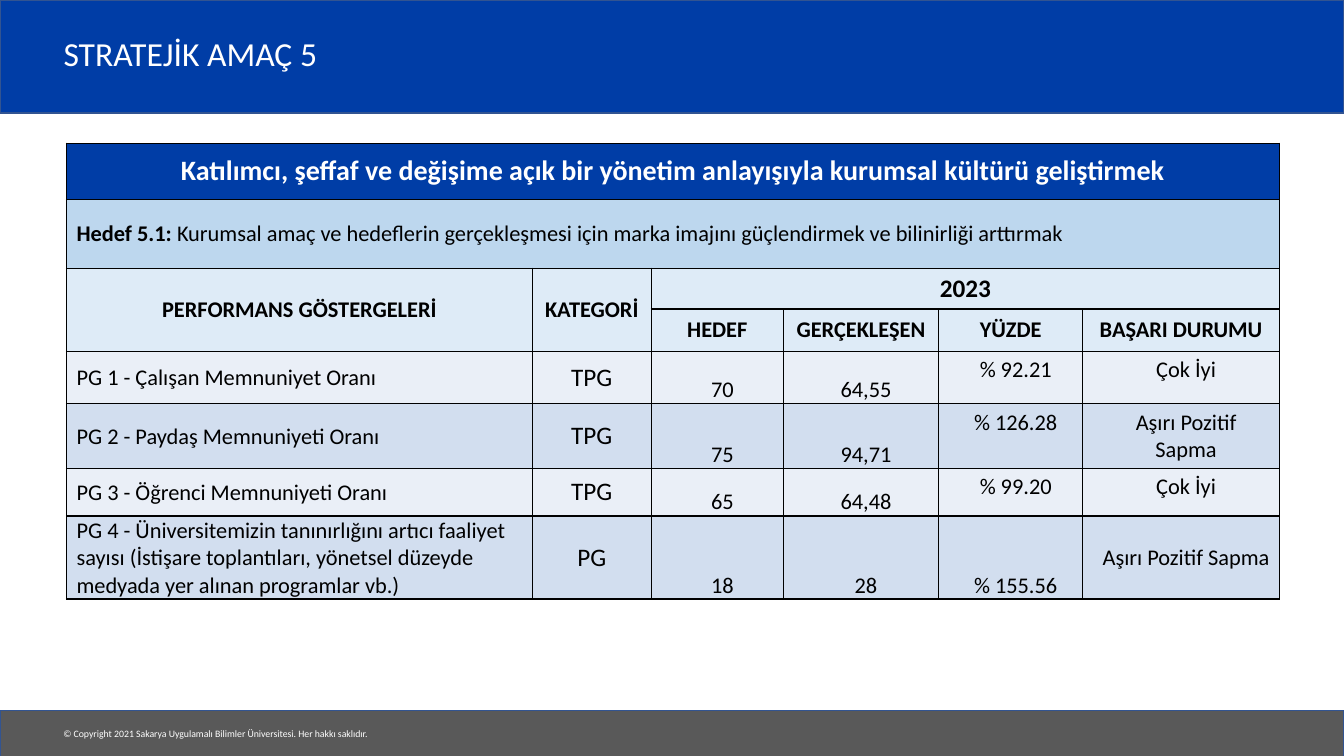
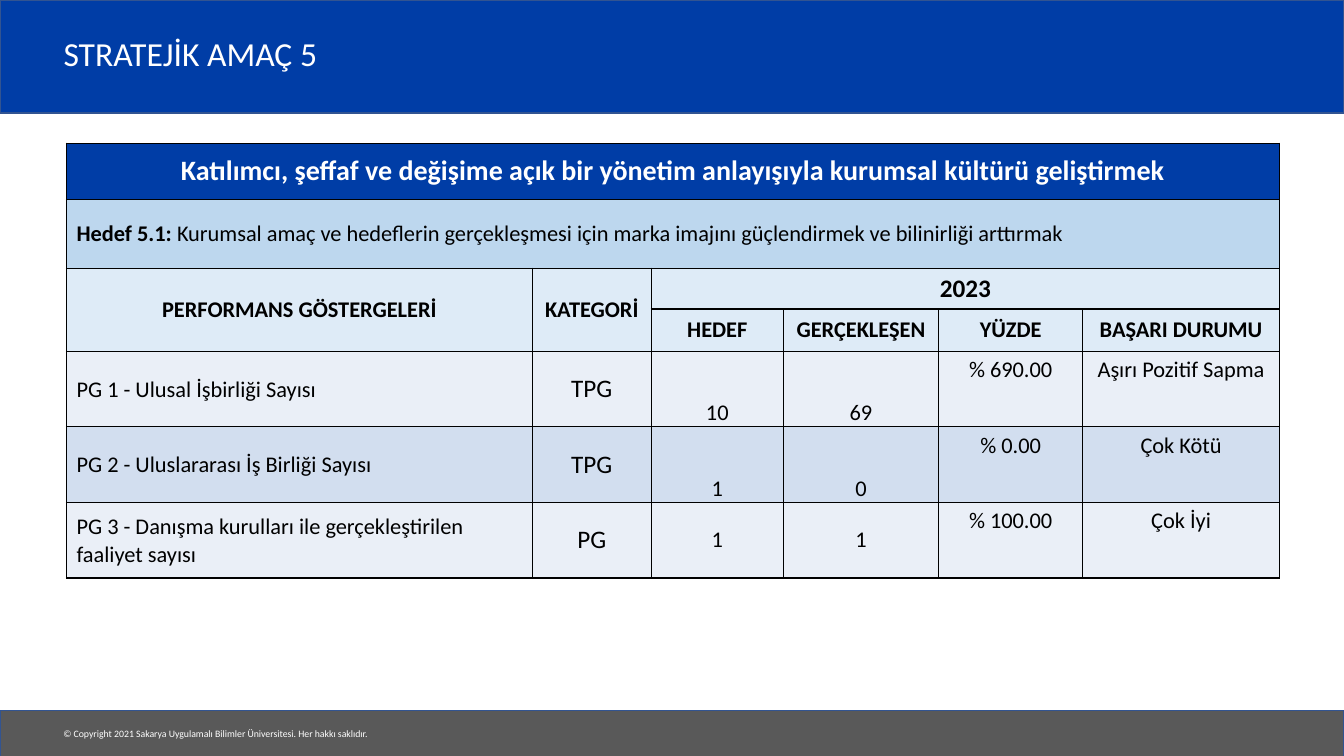
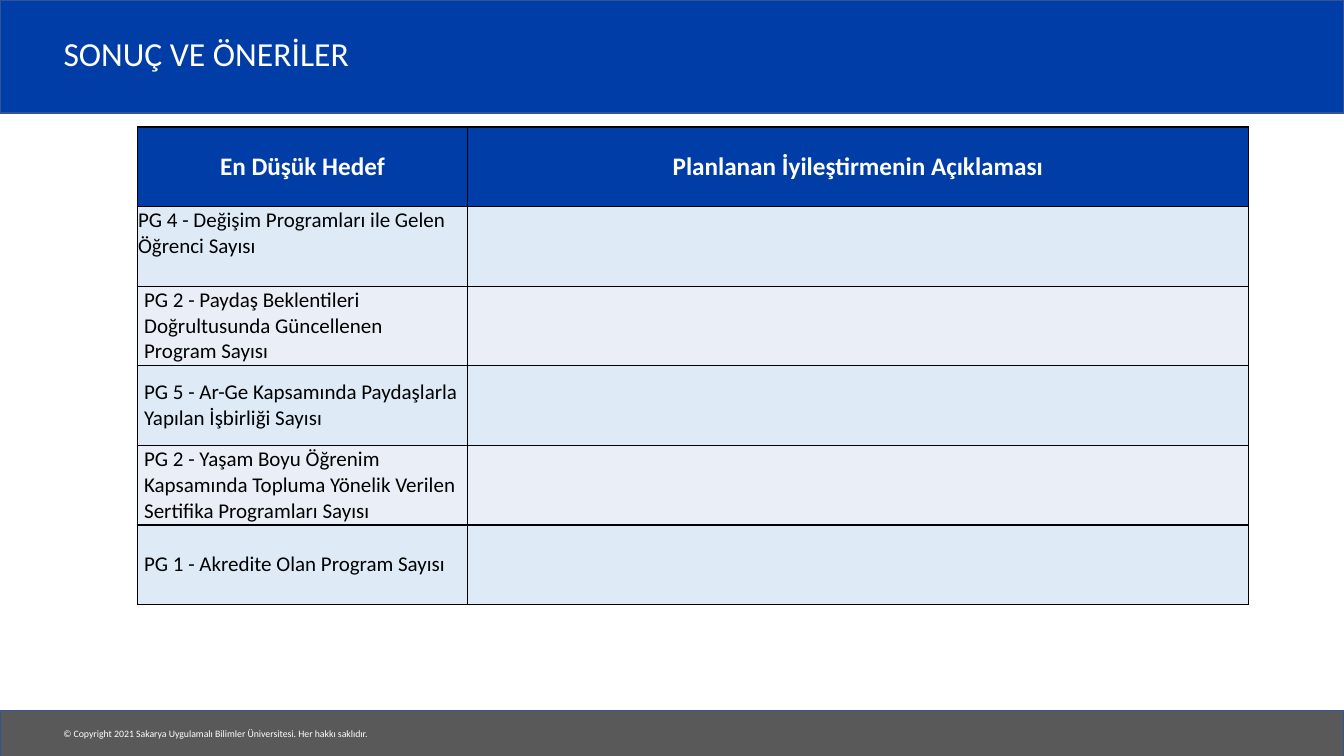
from lxml import etree
from pptx import Presentation
from pptx.dml.color import RGBColor
from pptx.enum import shapes, text
from pptx.oxml.ns import qn
from pptx.util import Inches, Pt

C = {
    "blue": "003DA6", "gray": "595959", "band_line": "325491",
    "white": "FFFFFF", "black": "000000",
    "goal": "BDD7EE", "head": "DEEBF7", "light": "EAEFF7", "mid": "D2DEEF",
}
FONT = "Calibri"
LEFT, CENTER = text.PP_ALIGN.LEFT, text.PP_ALIGN.CENTER
TOP, MIDDLE, BOTTOM = (text.MSO_ANCHOR.TOP, text.MSO_ANCHOR.MIDDLE,
                       text.MSO_ANCHOR.BOTTOM)
TIGHT = (0.01, 0.01, 0.01, 0)
NORMAL = (0.1, 0.05, 0.1, 0.05)
SIDE = (0.07, 0, 0.07, 0)

COPYRIGHT = ("© Copyright 2021 Sakarya Uygulamalı Bilimler Üniversitesi. "
             "Her hakkı saklıdır.")
AIM = ("Katılımcı, şeffaf ve değişime açık bir yönetim anlayışıyla "
       "kurumsal kültürü geliştirmek")
GOAL = ("Kurumsal amaç ve hedeflerin gerçekleşmesi için marka imajını "
        "güçlendirmek ve bilinirliği arttırmak")
GOAL_BOX = (0.66, 1.42, 12.02)
RESULT_BOX = (1.36, 1.26, 11.02)


def rgb(name):
    return RGBColor.from_string(C[name])


def add_text(tf, content, size=16, color="black", bold=False, align=LEFT,
             indent=0.0, spacing=None):
    """Fill the first paragraph; content is a string or (string, bold) runs."""
    p = tf.paragraphs[0]
    p.alignment = align
    if indent:
        p._p.get_or_add_pPr().set("marL", str(Inches(indent)))
    if spacing:
        p.line_spacing = spacing
    runs = [(content, bold)] if isinstance(content, str) else content
    for words, is_bold in runs:
        r = p.add_run()
        r.text = words
        r.font.name, r.font.size, r.font.bold = FONT, Pt(size), is_bold
        r.font.color.rgb = rgb(color)


# Parts shared by all slides
def add_band(sl, top, height, fill):
    sp = sl.shapes.add_shape(shapes.MSO_SHAPE.RECTANGLE, 0, Inches(top),
                             Inches(13.33), Inches(height))
    sp.shadow.inherit = False
    sp.fill.solid()
    sp.fill.fore_color.rgb = rgb(fill)
    sp.line.color.rgb = rgb("band_line")
    sp.line.width = Pt(1)
    return sp


def add_footer(sl):
    sp = sl.shapes.add_textbox(Inches(0.53), Inches(7.17), Inches(3.29),
                               Inches(0.22))
    sp.text_frame.word_wrap = False
    add_text(sp.text_frame, COPYRIGHT, size=7, color="white")
    return sp


def move_to_layout(layout, parts):
    """Replace the layout's footer placeholders with the shared parts."""
    for ph in list(layout.placeholders):
        if ph.placeholder_format.type != shapes.PP_PLACEHOLDER.TITLE:
            ph._element.getparent().remove(ph._element)
    for sp in parts:
        layout.shapes._spTree.append(sp._element)


def add_title(sl, words):
    title = sl.shapes.title
    title.left, title.top = Inches(0.53), Inches(0.19)
    title.width, title.height = Inches(11.03), Inches(0.73)
    tf = title.text_frame
    tf.auto_size = text.MSO_AUTO_SIZE.NONE
    tf.vertical_anchor = MIDDLE
    add_text(tf, words, size=24, color="white", spacing=0.9)


# Tables
def set_borders(cell):
    tc_pr = cell._tc.get_or_add_tcPr()
    for i, side in enumerate(("lnL", "lnR", "lnT", "lnB")):
        ln = etree.Element(qn(f"a:{side}"), w=str(Pt(1)))
        fill = etree.SubElement(ln, qn("a:solidFill"))
        etree.SubElement(fill, qn("a:srgbClr"), val=C["black"])
        tc_pr.insert(i, ln)


def add_grid(sl, box, widths, heights, fills):
    """Add an empty bordered table with one fill per row."""
    left, top, width = box
    frame = sl.shapes.add_table(len(heights), len(widths), Inches(left),
                                Inches(top), Inches(width),
                                Inches(sum(heights)))
    table = frame.table
    table.first_row = table.horz_banding = False
    for col, w in zip(table.columns, widths):
        col.width = Inches(w)
    for row, h, fill in zip(table.rows, heights, fills):
        row.height = Inches(h)
        for cell in row.cells:
            cell.fill.solid()
            cell.fill.fore_color.rgb = rgb(fill)
            set_borders(cell)
    return table


def fill_cell(cell, content, anchor=MIDDLE, insets=NORMAL, **fmt):
    cell.vertical_anchor = anchor
    (cell.margin_left, cell.margin_top, cell.margin_right,
     cell.margin_bottom) = map(Inches, insets)
    add_text(cell.text_frame, content, **fmt)


def add_goal_table(sl, box, rows, heights, indent, changes):
    """Aim, goal, two-level header, then one row per indicator.

    changes maps (row, column) to formats that differ from the column's.
    """
    fills = ["blue", "goal", "head", "head"]
    fills += [("light", "mid")[i % 2] for i in range(len(rows))]
    table = add_grid(sl, box, [4.62, 1.18, 1.31, 1.54, 1.43, 1.95],
                     [0.56, 0.68, 0.34, 0.42] + heights, fills)

    for first, last in (((0, 0), (0, 5)), ((1, 0), (1, 5)), ((2, 0), (3, 0)),
                        ((2, 1), (3, 1)), ((2, 2), (2, 5))):
        table.cell(*first).merge(table.cell(*last))

    # Header rows
    fill_cell(table.cell(0, 0), AIM, size=20, color="white", bold=True,
              align=CENTER)
    fill_cell(table.cell(1, 0), [("Hedef 5.1: ", True), (GOAL, False)])
    heads = [(2, 0, "PERFORMANS GÖSTERGELERİ", 16), (2, 1, "KATEGORİ", 16),
             (2, 2, "2023", 18), (3, 2, "HEDEF", 16),
             (3, 3, "GERÇEKLEŞEN", 16), (3, 4, "YÜZDE", 16),
             (3, 5, "BAŞARI DURUMU", 16)]
    for r, c, words, size in heads:
        fill_cell(table.cell(r, c), words, size=size, bold=True, align=CENTER)

    # Indicator rows
    number = dict(anchor=BOTTOM, insets=TIGHT, align=CENTER, indent=indent)
    result = dict(anchor=TOP, align=CENTER, indent=indent)
    formats = [dict(insets=TIGHT, indent=0.09), dict(size=18, align=CENTER),
               number, number, result, result]
    for r, row in enumerate(rows):
        for c, words in enumerate(row):
            fmt = formats[c] | changes.get((r, c), {})
            fill_cell(table.cell(r + 4, c), words, **fmt)


def add_result_table(sl, box, rows):
    """Lowest targets on the left, room for planned improvements right."""
    fills = ["blue"] + [("head", "light")[i % 2] for i in range(len(rows))]
    table = add_grid(sl, box, [3.28, 7.74], [0.79] * len(fills), fills)
    for c, words in enumerate(("En Düşük Hedef",
                               "Planlanan İyileştirmenin Açıklaması")):
        fill_cell(table.cell(0, c), words, insets=SIDE, size=18,
                  color="white", bold=True, align=CENTER)
    for r, (words, fmt) in enumerate(rows, 1):
        fill_cell(table.cell(r, 0), words,
                  **(dict(insets=SIDE, size=15) | fmt))


SATISFACTION = [
    ("PG 1 - Çalışan Memnuniyet Oranı", "TPG", "70", "64,55", "% 92.21",
     "Çok İyi"),
    ("PG 2 - Paydaş Memnuniyeti Oranı", "TPG", "75", "94,71", "% 126.28",
     "Aşırı Pozitif Sapma"),
    ("PG 3 - Öğrenci Memnuniyeti Oranı", "TPG", "65", "64,48", "% 99.20",
     "Çok İyi"),
    ("PG 4 - Üniversitemizin tanınırlığını artıcı faaliyet sayısı (İstişare "
     "toplantıları, yönetsel düzeyde medyada yer alınan programlar vb.)",
     "PG", "18", "28", "% 155.56", "Aşırı Pozitif Sapma"),
]
COOPERATION = [
    ("PG 1 - Ulusal İşbirliği Sayısı", "TPG", "10", "69", "% 690.00",
     "Aşırı Pozitif Sapma"),
    ("PG 2 - Uluslararası İş Birliği Sayısı", "TPG", "1", "0", "% 0.00",
     "Çok Kötü"),
    ("PG 3 - Danışma kurulları ile gerçekleştirilen faaliyet sayısı", "PG",
     "1", "1", "% 100.00", "Çok İyi"),
]
LOWEST = [
    ("PG 4 - Değişim Programları ile Gelen Öğrenci Sayısı",
     dict(anchor=TOP, insets=TIGHT)),
    ("PG 2 - Paydaş Beklentileri Doğrultusunda Güncellenen Program Sayısı",
     dict(insets=(0.07, 0, 0.3, 0))),
    ("PG 5 - Ar-Ge Kapsamında Paydaşlarla Yapılan İşbirliği Sayısı", {}),
    ("PG 2 - Yaşam Boyu Öğrenim Kapsamında Topluma Yönelik Verilen "
     "Sertifika Programları Sayısı", {}),
    ("PG 1 - Akredite Olan Program Sayısı", {}),
]


def main():
    prs = Presentation()
    prs.slide_width, prs.slide_height = Inches(13.33), Inches(7.5)
    layout = prs.slide_layouts[5]
    slides = []
    for words in ("STRATEJİK AMAÇ 5", "STRATEJİK AMAÇ 5",
                  "SONUÇ VE ÖNERİLER"):
        sl = prs.slides.add_slide(layout)
        add_title(sl, words)
        slides.append(sl)
    satisfaction, cooperation, results = slides

    move_to_layout(layout, [add_band(results, 0, 1.12, "blue"),
                            add_band(results, 7.05, 0.46, "gray"),
                            add_footer(results)])

    add_goal_table(satisfaction, GOAL_BOX, SATISFACTION,
                   [0.52, 0.58, 0.47, 0.75], 0.1,
                   {(3, 4): dict(anchor=BOTTOM, insets=TIGHT),
                    (3, 5): dict(anchor=MIDDLE, insets=TIGHT)})
    add_goal_table(cooperation, GOAL_BOX, COOPERATION, [0.75] * 3, 0,
                   {(2, c): dict(anchor=MIDDLE, insets=NORMAL)
                    for c in (2, 3)})
    add_result_table(results, RESULT_BOX, LOWEST)
    prs.save("out.pptx")


if __name__ == "__main__":
    main()
